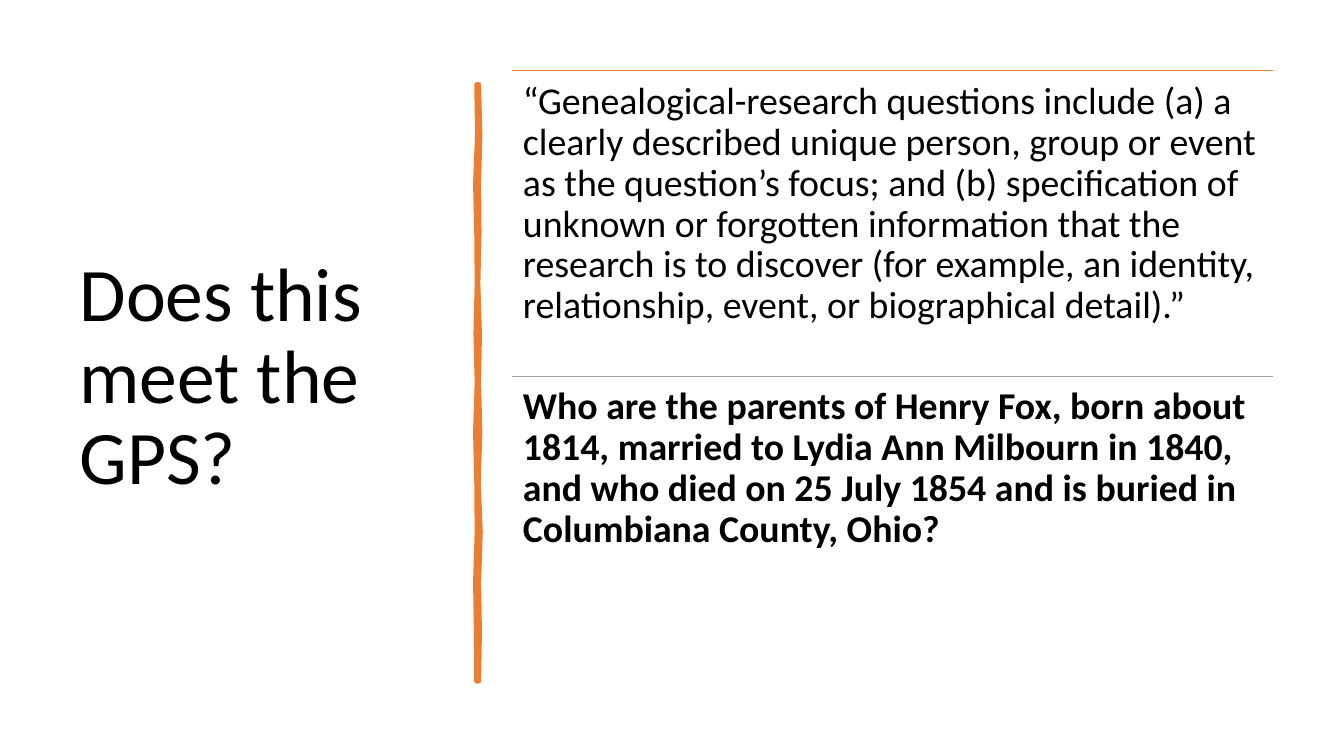
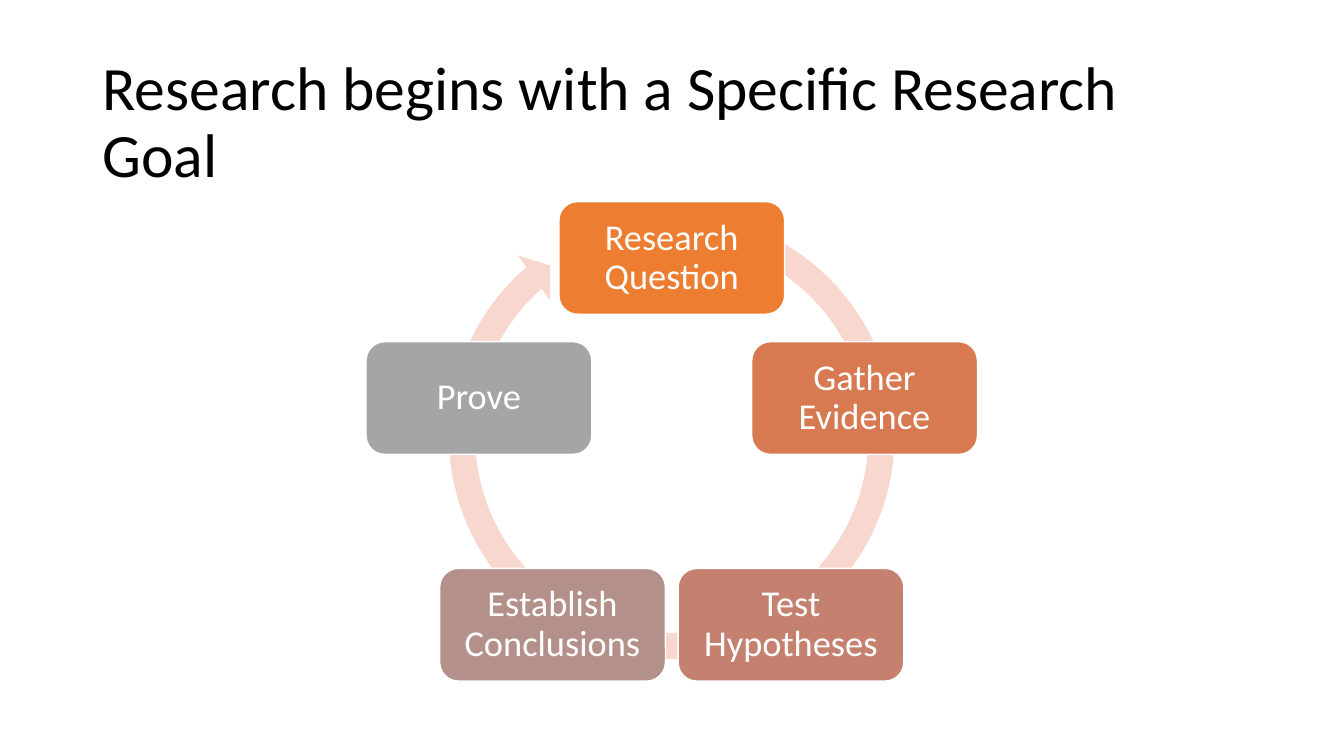
import math

import pptx
import pptx.dml.color
import pptx.enum.shapes
import pptx.enum.text
import pptx.util
from pptx.oxml.ns import qn

Cm, Pt = pptx.util.Cm, pptx.util.Pt
RGB = pptx.dml.color.RGBColor
SHAPE = pptx.enum.shapes.MSO_SHAPE
ANCHOR = pptx.enum.text.MSO_ANCHOR
ALIGN = pptx.enum.text.PP_ALIGN

# Shared style
FONT = "Calibri"
BLACK = RGB(0x00, 0x00, 0x00)
WHITE = RGB(0xFF, 0xFF, 0xFF)
ORANGE = RGB(0xED, 0x7D, 0x31)
RUST = RGB(0xD8, 0x7A, 0x51)
CLAY = RGB(0xC4, 0x81, 0x70)
MAUVE = RGB(0xB4, 0x90, 0x8B)
GREY = RGB(0xA5, 0xA5, 0xA5)
PINK = RGB(0xF8, 0xD7, 0xCE)
INSET = Cm(0.28)

# Content
QUESTIONS = [
    ("“Genealogical-research questions include (a) a clearly described unique "
     "person, group or event as the question’s focus; and (b) specification of "
     "unknown or forgotten information that the research is to discover (for "
     "example, an identity, relationship, event, or biographical detail).”",
     ORANGE, False),
    ("Who are the parents of Henry Fox, born about 1814, married to Lydia Ann "
     "Milbourn in 1840, and who died on 25 July 1854 and is buried in "
     "Columbiana County, Ohio?", GREY, True),
]
STEPS = [
    ("Research Question", ORANGE),
    ("Gather Evidence", RUST),
    ("Test Hypotheses", CLAY),
    ("Establish Conclusions", MAUVE),
    ("Prove", GREY),
]


def write(tf, text, size, color, align=ALIGN.LEFT, bold=False):
    tf.word_wrap = True
    tf.auto_size = pptx.enum.text.MSO_AUTO_SIZE.NONE
    p = tf.paragraphs[0]
    p.alignment = align
    p.line_spacing = 0.9
    r = p.add_run()
    r.text = text
    r.font.name = FONT
    r.font.size = Pt(size)
    r.font.bold = bold
    r.font.color.rgb = color


def set_insets(tf):
    tf.margin_left = tf.margin_right = INSET
    tf.margin_top = tf.margin_bottom = INSET


def paint(sp, fill, line=None, width=1):
    sp.shadow.inherit = False
    sp.fill.solid()
    sp.fill.fore_color.rgb = fill
    if line is None:
        sp.line.fill.background()
    else:
        sp.line.color.rgb = line
        sp.line.width = Pt(width)


def add_titled_slide(prs, text, size, left, top, width, height):
    s = prs.slides.add_slide(prs.slide_layouts[5])
    title = s.shapes.title
    title.left, title.top = Cm(left), Cm(top)
    title.width, title.height = Cm(width), Cm(height)
    title.text_frame.vertical_anchor = ANCHOR.MIDDLE
    write(title.text_frame, text, size, BLACK)
    return s


def add_rule(s, left, top, width, color):
    rule = s.shapes.add_connector(
        pptx.enum.shapes.MSO_CONNECTOR.STRAIGHT,
        Cm(left), Cm(top), Cm(left + width), Cm(top))
    rule.line.color.rgb = color
    rule.line.width = Pt(1)
    rule._element.spPr.append(rule._element.spPr.makeelement(qn("a:effectLst"), {}))


def add_brush_stroke(s, x, top, bottom):
    """Vertical bar with two slightly wavy edges."""
    right = [0, 0.03, 0, 0.01, -0.02, 0.02, 0, 0.03, -0.01, 0.04, 0, 0.02, 0]
    left = [0, 0.02, -0.03, 0, 0.01, -0.02, 0.01, -0.03, 0, 0.01, -0.03, -0.01, 0]
    step = (bottom - top) / (len(right) - 1)
    edge = [(x + 0.03 + d, top + i * step) for i, d in enumerate(right)]
    edge += [(x - 0.03 + d, top + i * step) for i, d in enumerate(left)][::-1]
    points = [(Cm(px), Cm(py)) for px, py in edge]
    builder = s.shapes.build_freeform(*points[0])
    builder.add_line_segments(points[1:], close=True)
    paint(builder.convert_to_shape(), ORANGE, ORANGE, 3.25)


def add_question(s, left, top, width, height, text, color, bold):
    add_rule(s, left, top, width, color)
    box = s.shapes.add_textbox(Cm(left), Cm(top), Cm(width), Cm(height))
    set_insets(box.text_frame)
    write(box.text_frame, text, 27, BLACK, bold=bold)


def add_cycle_arrow(s, cx, cy, size):
    arrow = s.shapes.add_shape(SHAPE.CIRCULAR_ARROW, Cm(cx - size / 2),
                               Cm(cy - size / 2), Cm(size), Cm(size))
    # Thickness, head angle, end angle, start angle, head width
    for i, value in enumerate([5.5 / 100, 3.31, 137.36, 174.1, 5.8 / 100]):
        arrow.adjustments[i] = value
    paint(arrow, PINK)


def add_step(s, cx, cy, text, color):
    width, height = 5.69, 2.84
    sp = s.shapes.add_shape(SHAPE.ROUNDED_RECTANGLE, Cm(cx - width / 2),
                            Cm(cy - height / 2), Cm(width), Cm(height))
    paint(sp, color, WHITE)
    set_insets(sp.text_frame)
    sp.text_frame.vertical_anchor = ANCHOR.MIDDLE
    write(sp.text_frame, text, 26, WHITE, ALIGN.CENTER)


def build_question_slide(prs):
    s = add_titled_slide(prs, "Does this meet the GPS?", 54, 1.75, 1.78, 9.5, 15.52)
    add_brush_stroke(s, 12.04, 2.13, 17.17)
    top, height = 1.78, 7.7
    for i, (text, color, bold) in enumerate(QUESTIONS):
        add_question(s, 12.9, top + i * height, 19.18, height, text, color, bold)


def build_cycle_slide(prs):
    s = add_titled_slide(prs, "Research begins with a Specific Research Goal",
                         44, 2.33, 1.55, 29.21, 3.15)
    cx, cy, radius = 16.93, 11.61, 5.11
    add_cycle_arrow(s, cx, 10.99, 11.96)
    for i, (text, color) in enumerate(STEPS):
        angle = 2 * math.pi * i / len(STEPS)
        add_step(s, cx + radius * math.sin(angle), cy - radius * math.cos(angle),
                 text, color)


def main():
    prs = pptx.Presentation()
    prs.slide_width, prs.slide_height = Cm(33.87), Cm(19.05)
    build_question_slide(prs)
    build_cycle_slide(prs)
    prs.save("out.pptx")


if __name__ == "__main__":
    main()
